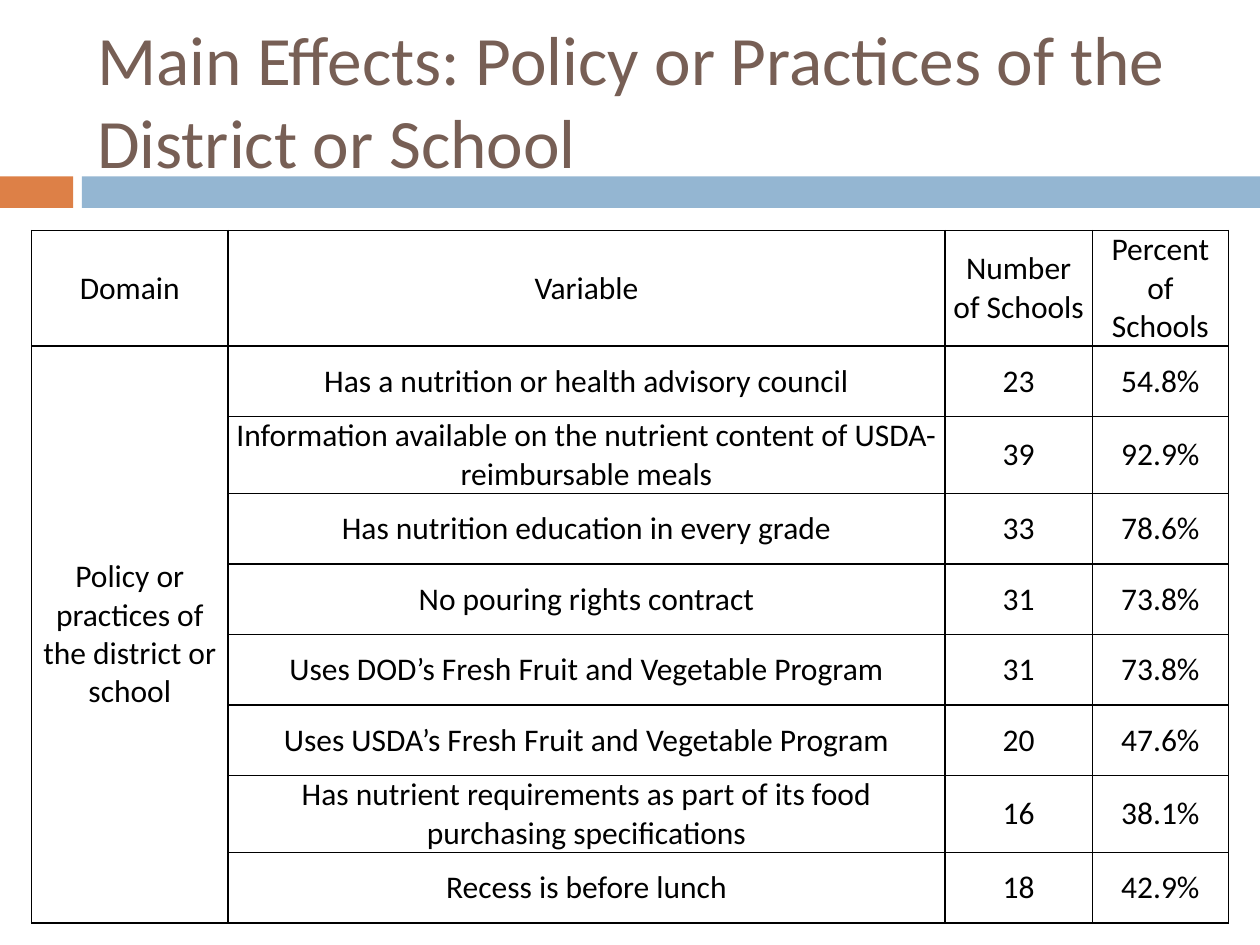
from lxml import etree
from pptx import Presentation
from pptx.dml.color import RGBColor
from pptx.enum import shapes, text
from pptx.oxml.ns import qn
from pptx.util import Inches, Pt

TITLE = "Main Effects: Policy or Practices of the District or School"
HEADERS = ("Domain", "Variable", "Number of Schools", "Percent of Schools")
DOMAIN = "Policy or practices of the district or school"
VARIABLES = [
    ("Has a nutrition or health advisory council", "23", "54.8%"),
    ("Information available on the nutrient content of USDA-reimbursable meals", "39", "92.9%"),
    ("Has nutrition education in every grade", "33", "78.6%"),
    ("No pouring rights contract", "31", "73.8%"),
    ("Uses DOD’s Fresh Fruit and Vegetable Program", "31", "73.8%"),
    ("Uses USDA’s Fresh Fruit and Vegetable Program", "20", "47.6%"),
    ("Has nutrient requirements as part of its food purchasing specifications", "16", "38.1%"),
    ("Recess is before lunch", "18", "42.9%"),
]

THEME = {
    "font": "Calibri", "title_size": 39.6, "table_size": 18,
    "title": "775F55", "ink": "000000", "accent": "DD8047", "band": "94B6D2",
}
SLIDE_W, SLIDE_H = 10, 7.5
BAND_TOP, BAND_H = 1.4, 0.25
BANDS = [(0, 0.58, "accent"), (0.65, SLIDE_W - 0.65, "band")]
TITLE_BOX = (0.67, 0.25, 8.92, 1.08)
TABLE_LEFT, TABLE_TOP = 0.25, 1.83
COL_WIDTHS = (1.56, 5.69, 1.17, 1.08)
HEADER_H, ONE_LINE_H, TWO_LINE_H = 0.88, 0.56, 0.59
LINE_CHARS = 60  # longest variable that stays on one line
CELL_INSET = 0.06


def add_run(p, words, size, color):
    r = p.add_run()
    r.text = words
    r.font.name = THEME["font"]
    r.font.size = Pt(size)
    r.font.bold = False
    r.font.color.rgb = RGBColor.from_string(THEME[color])


def add_band(slide, left, width, color):
    sp = slide.shapes.add_shape(shapes.MSO_SHAPE.RECTANGLE, Inches(left), Inches(BAND_TOP),
                                Inches(width), Inches(BAND_H))
    sp.shadow.inherit = False
    sp.fill.solid()
    sp.fill.fore_color.rgb = RGBColor.from_string(THEME[color])
    sp.line.fill.background()


def add_title(slide):
    sp = slide.shapes.title
    sp.left, sp.top, sp.width, sp.height = map(Inches, TITLE_BOX)
    tf = sp.text_frame
    tf.word_wrap = True
    tf.auto_size = text.MSO_AUTO_SIZE.NONE
    tf.vertical_anchor = text.MSO_ANCHOR.MIDDLE
    p = tf.paragraphs[0]
    p.alignment = text.PP_ALIGN.LEFT
    add_run(p, TITLE, THEME["title_size"], "title")


def format_cell(cell):
    """Outline the cell, clear its fill and centre its text area."""
    tc_pr = cell._tc.get_or_add_tcPr()
    for side in ("lnL", "lnR", "lnT", "lnB"):
        ln = etree.SubElement(tc_pr, qn(f"a:{side}"), w=str(Pt(1)))
        fill = etree.SubElement(ln, qn("a:solidFill"))
        etree.SubElement(fill, qn("a:srgbClr"), val=THEME["ink"])
    cell.fill.background()
    cell.vertical_anchor = text.MSO_ANCHOR.MIDDLE
    cell.margin_left = cell.margin_right = Inches(CELL_INSET)
    cell.margin_top = cell.margin_bottom = 0


def add_results_table(slide):
    rows = [HEADERS] + [(DOMAIN if i == 0 else "", *v) for i, v in enumerate(VARIABLES)]
    heights = [HEADER_H] + [TWO_LINE_H if len(v[0]) > LINE_CHARS else ONE_LINE_H
                            for v in VARIABLES]
    table = slide.shapes.add_table(len(rows), len(HEADERS), Inches(TABLE_LEFT), Inches(TABLE_TOP),
                                   Inches(sum(COL_WIDTHS)), Inches(sum(heights))).table
    table.first_row = table.horz_banding = False
    for column, width in zip(table.columns, COL_WIDTHS):
        column.width = Inches(width)
    for r, (row, height) in enumerate(zip(rows, heights)):
        table.rows[r].height = Inches(height)
        for c, words in enumerate(row):
            cell = table.cell(r, c)
            format_cell(cell)
            if words:
                p = cell.text_frame.paragraphs[0]
                p.alignment = text.PP_ALIGN.CENTER
                add_run(p, words, THEME["table_size"], "ink")
    table.cell(1, 0).merge(table.cell(len(VARIABLES), 0))


def main():
    prs = Presentation()
    prs.slide_width, prs.slide_height = Inches(SLIDE_W), Inches(SLIDE_H)
    slide = prs.slides.add_slide(prs.slide_layouts[5])
    for band in BANDS:
        add_band(slide, *band)
    add_title(slide)
    add_results_table(slide)
    prs.save("out.pptx")


if __name__ == "__main__":
    main()
